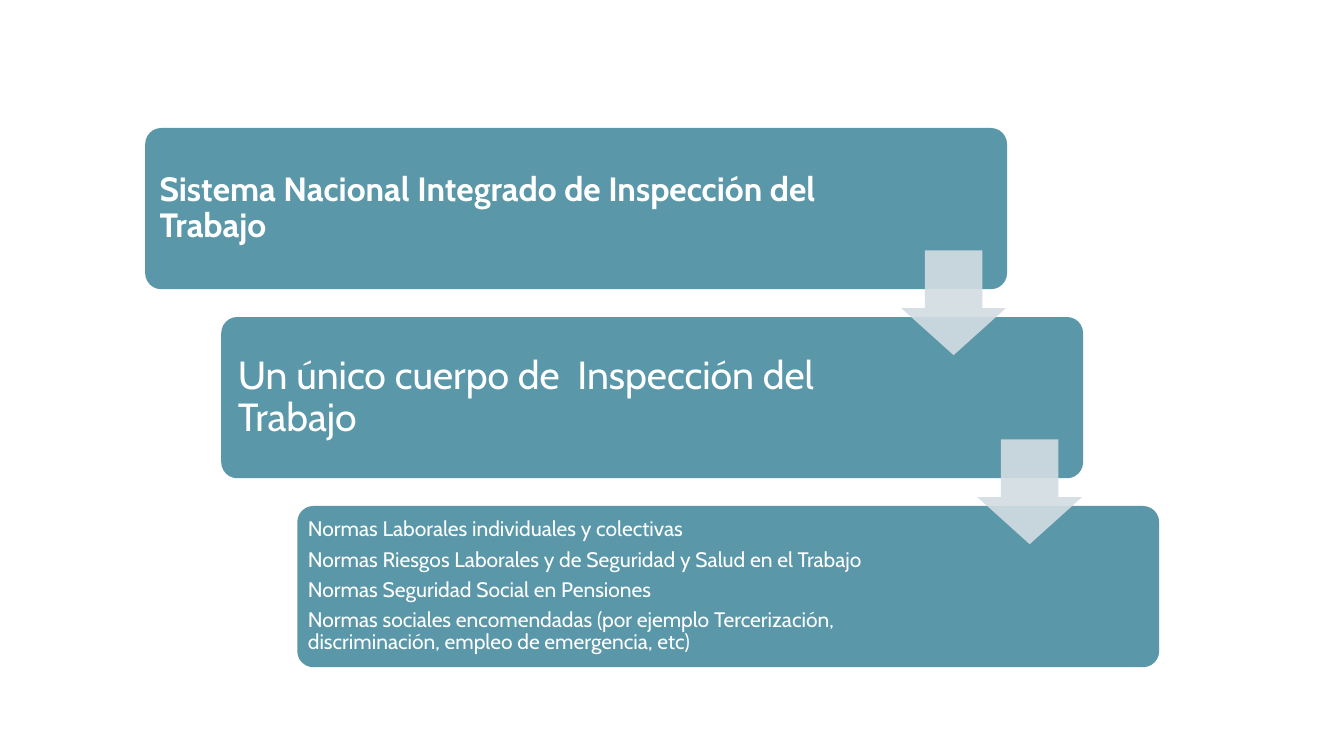
import pptx
import pptx.dml.color
import pptx.enum.shapes
import pptx.enum.text
import pptx.util
from lxml import etree

COLOURS = {"step": "5A97A9", "arrow": "D2DDE2", "text": "FFFFFF"}
FONT = "Cabin"
SHAPES = pptx.enum.shapes.MSO_SHAPE
STEPS = [
    {"lines": ["Sistema Nacional Integrado de Inspección del Trabajo"],
     "size": 24, "bold": True, "inset": 0.1, "text_width": 79.8},
    {"lines": ["Un único cuerpo de  Inspección del Trabajo"],
     "size": 28, "bold": False, "inset": 0.12, "text_width": 77.9},
    {"lines": ["Normas Laborales individuales y colectivas",
               "Normas Riesgos Laborales y de Seguridad y Salud en el Trabajo",
               "Normas Seguridad Social en Pensiones",
               "Normas sociales encomendadas (por ejemplo Tercerización, "
               "discriminación, empleo de emergencia, etc)"],
     "size": 15, "bold": False, "inset": 0.06, "text_width": 77.9},
]


def part_of(box, left, top, width, height):
    """Return the part of a box given by percentages of its sides."""
    box_left, box_top, box_width, box_height = box
    return (int(box_left + box_width * left / 100),
            int(box_top + box_height * top / 100),
            int(box_width * width / 100),
            int(box_height * height / 100))


def add_filled_shape(slide, box, preset, adjustments, colour):
    """Add a flat shape without outline."""
    shape = slide.shapes.add_shape(preset, *box)
    shape.shadow.inherit = False
    shape.fill.solid()
    shape.fill.fore_color.rgb = pptx.dml.color.RGBColor.from_string(COLOURS[colour])
    shape.line.fill.background()
    for index, value in enumerate(adjustments):
        shape.adjustments[index] = value
    return shape


def add_step(slide, box, step):
    """Add a rounded panel with its text on the left."""
    add_filled_shape(slide, box, SHAPES.ROUNDED_RECTANGLE, [0.1], "step")
    text_box = slide.shapes.add_textbox(*part_of(box, 0.53, 2.9, step["text_width"], 94.2))
    frame = text_box.text_frame
    frame.word_wrap = True
    frame.vertical_anchor = pptx.enum.text.MSO_ANCHOR.MIDDLE
    inset = pptx.util.Inches(step["inset"])
    frame.margin_left = frame.margin_right = inset
    frame.margin_top = frame.margin_bottom = inset
    for index, line in enumerate(step["lines"]):
        paragraph = frame.add_paragraph() if index else frame.paragraphs[0]
        paragraph.line_spacing = 0.9
        paragraph.space_after = pptx.util.Pt(0.35 * step["size"])
        run = paragraph.add_run()
        run.text = line
        run.font.name = FONT
        run.font.size = pptx.util.Pt(step["size"])
        run.font.bold = step["bold"]
        run.font.color.rgb = pptx.dml.color.RGBColor.from_string(COLOURS["text"])


def add_step_arrow(slide, box):
    """Add a translucent arrow leading down from a step to the next."""
    arrow = add_filled_shape(slide, part_of(box, 87.72, 75.9, 12.16, 65),
                             SHAPES.DOWN_ARROW, [0.55, 0.45], "arrow")
    colour = arrow.fill._xPr.find(".//" + pptx.oxml.ns.qn("a:srgbClr"))
    etree.SubElement(colour, pptx.oxml.ns.qn("a:alpha"), val="90000")


def add_staircase(slide, box):
    """Add the descending steps and the arrows that join them."""
    step_boxes = [part_of(box, 10.8 + 5.66 * index, 16.93 + 25 * index, 64.13, 21.33)
                  for index in range(len(STEPS))]
    for step_box, step in zip(step_boxes, STEPS):
        add_step(slide, step_box, step)
    for step_box in step_boxes[:-1]:
        add_step_arrow(slide, step_box)


def main():
    """Build and save the presentation."""
    presentation = pptx.Presentation()
    presentation.slide_width = pptx.util.Inches(13.33)
    presentation.slide_height = pptx.util.Inches(7.5)
    slide = presentation.slides.add_slide(presentation.slide_layouts[6])
    add_staircase(slide, (0, 0, presentation.slide_width, presentation.slide_height))
    presentation.save("out.pptx")


if __name__ == "__main__":
    main()
